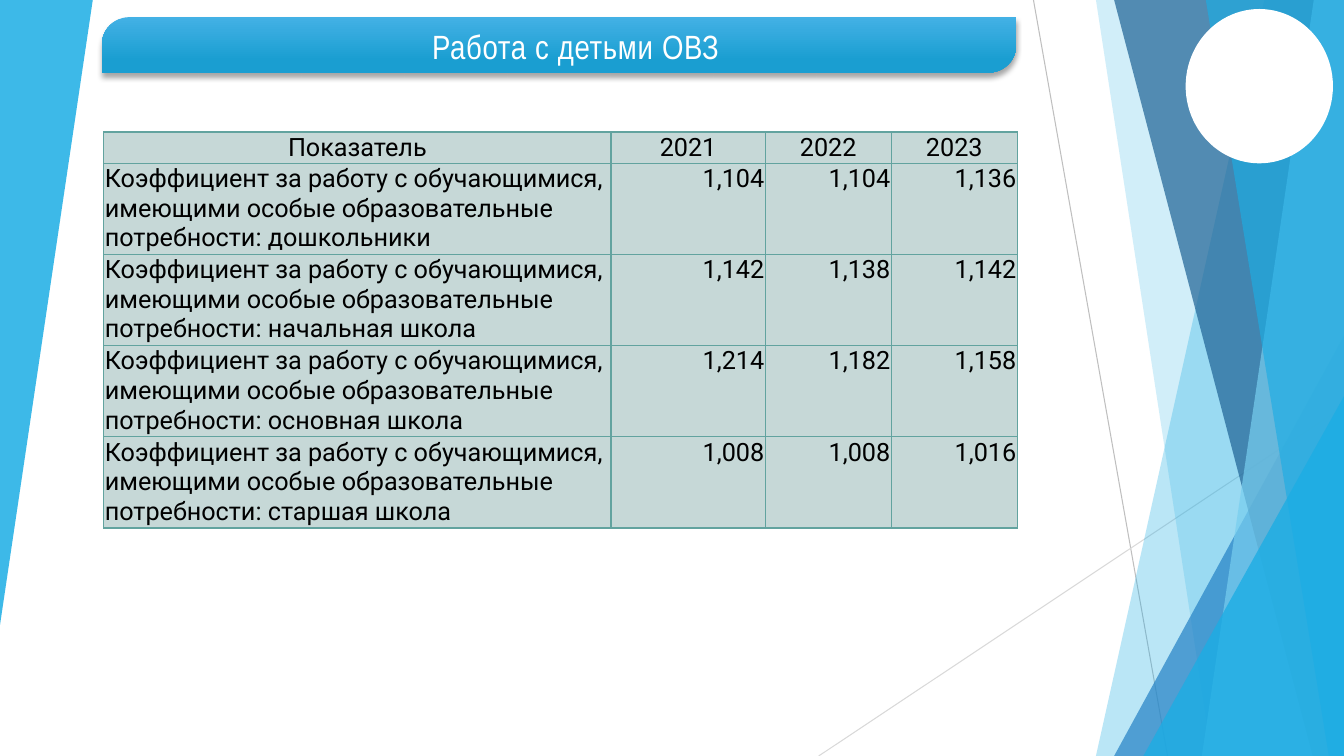
"""Build the slide about coefficients for work with children with special needs."""
from dataclasses import dataclass

from lxml import etree
from pptx import Presentation
from pptx.dml.color import RGBColor
from pptx.enum.shapes import MSO_CONNECTOR, MSO_SHAPE
from pptx.enum.text import MSO_ANCHOR, PP_ALIGN
from pptx.oxml.ns import qn
from pptx.shapes.autoshape import Shape
from pptx.slide import Slide
from pptx.table import _Cell
from pptx.text.text import _Paragraph
from pptx.util import Inches, Pt

STRAIGHT = MSO_CONNECTOR.STRAIGHT
TRIANGLE, ELLIPSE = MSO_SHAPE.RIGHT_TRIANGLE, MSO_SHAPE.OVAL
TRIANGLE = MSO_SHAPE.ISOSCELES_TRIANGLE
BANNER = MSO_SHAPE.ROUND_2_DIAG_RECTANGLE
LEFT, CENTER, RIGHT = PP_ALIGN.LEFT, PP_ALIGN.CENTER, PP_ALIGN.RIGHT
TOP, MIDDLE = MSO_ANCHOR.TOP, MSO_ANCHOR.MIDDLE

WHITE = RGBColor(0xFF, 0xFF, 0xFF)
BLACK = RGBColor(0x00, 0x00, 0x00)
GRAY = RGBColor(0xBF, 0xBF, 0xBF)
LIGHT_GRAY = RGBColor(0xD9, 0xD9, 0xD9)
CYAN = RGBColor(0x1C, 0xAD, 0xE4)
PALE_CYAN = RGBColor(0x77, 0xCE, 0xEF)
BLUE = RGBColor(0x26, 0x83, 0xC6)
DARK_BLUE = RGBColor(0x1D, 0x62, 0x94)
BANNER_TOP = RGBColor(0x43, 0xB1, 0xE5)
BANNER_BOTTOM = RGBColor(0x1A, 0x9E, 0xD1)
CELL_FILL = RGBColor(0xC6, 0xD8, 0xD7)
CELL_BORDER = RGBColor(0x62, 0xA3, 0x9F)

WIDTH, HEIGHT = 13.33, 7.5
HEADERS = ("Показатель", "2021", "2022", "2023")
INDICATOR = "Коэффициент за работу с обучающимися, имеющими особые образовательные потребности: "
COEFFICIENTS = {
    "дошкольники": ("1,104", "1,104", "1,136"),
    "начальная школа": ("1,142", "1,138", "1,142"),
    "основная школа": ("1,214", "1,182", "1,158"),
    "старшая школа": ("1,008", "1,008", "1,016"),
}
COLUMN_WIDTHS = (5.03, 1.53, 1.25, 1.25)
HEADER_HEIGHT, ROW_HEIGHT = 0.31, 0.905


@dataclass(frozen=True)
class Ray:
    start: tuple[float, float]
    end: tuple[float, float]
    color: RGBColor


@dataclass(frozen=True)
class Band:
    """A translucent band from the top edge to the bottom edge, ending at the right."""
    top_left: float
    bottom_left: float
    color: RGBColor
    opacity: int


@dataclass(frozen=True)
class Wedge:
    """A translucent right-angled triangle."""
    left: float
    top: float
    width: float
    height: float
    color: RGBColor
    opacity: int
    rotation: int = 0


RAYS = (
    Ray((10.25, 0), (11.58, HEIGHT), GRAY),
    Ray((WIDTH, 4.03), (8.12, HEIGHT), LIGHT_GRAY),
)
FACETS = (
    Band(12.54, 10.87, CYAN, 30),
    Band(10.87, 12.02, CYAN, 20),
    Wedge(11.05, 3.33, 2.28, 4.17, BLUE, 72),
    Band(11.05, 13.02, DARK_BLUE, 70),
    Band(13.03, 11.92, PALE_CYAN, 70),
    Band(11.96, 13.18, CYAN, 65),
    Wedge(11.34, 3.93, 1.99, 3.57, CYAN, 80),
    Wedge(0, 0, 0.92, 6.2, CYAN, 85, rotation=180),
)


def add_ray(slide: Slide, ray: Ray) -> None:
    """Draw one thin background line."""
    ends = [Inches(value) for value in (*ray.start, *ray.end)]
    connector = slide.shapes.add_connector(STRAIGHT, *ends)
    connector.line.color.rgb = ray.color
    connector.line.width = Pt(0.75)
    etree.SubElement(connector._element.spPr, qn("a:effectLst"))


def add_facet(slide: Slide, facet: Band | Wedge) -> None:
    """Draw one translucent background facet."""
    if isinstance(facet, Band):
        builder = slide.shapes.build_freeform(Inches(facet.top_left), 0)
        corners = ((WIDTH, 0), (WIDTH, HEIGHT), (facet.bottom_left, HEIGHT))
        builder.add_line_segments([(Inches(x), Inches(y)) for x, y in corners], close=True)
        shape = builder.convert_to_shape()
    else:
        box = (facet.left, facet.top, facet.width, facet.height)
        shape = slide.shapes.add_shape(TRIANGLE, *map(Inches, box))
        shape.adjustments[0] = 1
        shape.rotation = facet.rotation
    shape.shadow.inherit = False
    shape.line.fill.background()
    shape.fill.solid()
    shape.fill.fore_color.rgb = facet.color
    color = shape._element.spPr.find(f"{qn('a:solidFill')}/{qn('a:srgbClr')}")
    etree.SubElement(color, qn("a:alpha"), val=str(facet.opacity * 1000))


def add_circle(slide: Slide) -> None:
    """Draw the white circle in the corner."""
    circle = slide.shapes.add_shape(ELLIPSE, Inches(11.77), Inches(0.1), Inches(1.44), Inches(1.51))
    circle.shadow.inherit = False
    circle.fill.solid()
    circle.fill.fore_color.rgb = WHITE
    circle.line.color.rgb = WHITE
    circle.line.width = Pt(1.5)


def add_shadow(shape: Shape) -> None:
    """Drop a soft shadow straight down from the shape."""
    shape.shadow.inherit = False
    effects = shape._element.spPr.find(qn("a:effectLst"))
    shadow = etree.SubElement(effects, qn("a:outerShdw"), blurRad=str(Pt(4)), dist=str(Pt(3)),
                              dir="5400000", rotWithShape="0")
    color = etree.SubElement(shadow, qn("a:srgbClr"), val=str(BLACK))
    etree.SubElement(color, qn("a:alpha"), val="35000")


def add_banner(slide: Slide) -> None:
    """Draw the gradient banner behind the title."""
    banner = slide.shapes.add_shape(BANNER, Inches(1.01), Inches(0.17), Inches(9.07), Inches(0.55))
    banner.adjustments[0] = 0.5
    banner.adjustments[1] = 0
    banner.line.fill.background()
    banner.fill.gradient()
    banner.fill.gradient_angle = 270
    stops = zip(banner.fill.gradient_stops, (0, 0.78), (BANNER_TOP, BANNER_BOTTOM))
    for stop, position, color in stops:
        stop.position = position
        stop.color.rgb = color
    add_shadow(banner)


def format_paragraph(paragraph: _Paragraph, font: str, size: int, color: RGBColor,
                     alignment: PP_ALIGN) -> None:
    """Apply font and alignment to a paragraph."""
    paragraph.alignment = alignment
    paragraph.font.name = font
    paragraph.font.size = Pt(size)
    paragraph.font.bold = False
    paragraph.font.color.rgb = color


def place_title(slide: Slide) -> None:
    """Fill the title placeholder and bring it in front of the banner."""
    title = slide.shapes.title
    title.left, title.top, title.width, title.height = map(Inches, (1.5, 0.21, 8.42, 0.5))
    title.text_frame.text = "Работа с детьми ОВЗ"
    title.text_frame.vertical_anchor = TOP
    paragraph = title.text_frame.paragraphs[0]
    format_paragraph(paragraph, "Arial Narrow", 24, WHITE, CENTER)
    paragraph.runs[0]._r.get_or_add_rPr().set("spc", "50")
    slide.shapes._spTree.append(title._element)


def fill_cell(cell: _Cell, text: str, alignment: PP_ALIGN, anchor: MSO_ANCHOR) -> None:
    """Write and style one table cell."""
    cell.margin_left = cell.margin_right = cell.margin_top = Inches(0.01)
    cell.margin_bottom = 0
    cell.vertical_anchor = anchor
    cell.text = text
    format_paragraph(cell.text_frame.paragraphs[0], "Roboto", 18, BLACK, alignment)
    properties = cell._tc.get_or_add_tcPr()
    for side in ("a:lnL", "a:lnR", "a:lnT", "a:lnB"):
        border = etree.SubElement(properties, qn(side), w=str(Pt(1)))
        solid = etree.SubElement(border, qn("a:solidFill"))
        etree.SubElement(solid, qn("a:srgbClr"), val=str(CELL_BORDER))
    cell.fill.solid()
    cell.fill.fore_color.rgb = CELL_FILL


def add_coefficients(slide: Slide) -> None:
    """Draw the table of coefficients by school level and year."""
    rows = [HEADERS, *((INDICATOR + level, *values) for level, values in COEFFICIENTS.items())]
    heights = [HEADER_HEIGHT] + [ROW_HEIGHT] * len(COEFFICIENTS)
    frame = slide.shapes.add_table(len(rows), len(HEADERS), Inches(1.03), Inches(1.31),
                                   Inches(sum(COLUMN_WIDTHS)), Inches(sum(heights)))
    table = frame.table
    table.first_row = table.horz_banding = False
    for column, width in zip(table.columns, COLUMN_WIDTHS):
        column.width = Inches(width)
    for row_index, (row, height) in enumerate(zip(rows, heights)):
        table.rows[row_index].height = Inches(height)
        for column_index, text in enumerate(row):
            alignment = CENTER if row_index == 0 else RIGHT if column_index else LEFT
            anchor = TOP if row_index else MIDDLE
            fill_cell(table.cell(row_index, column_index), text, alignment, anchor)


def main() -> None:
    """Build and save the presentation."""
    presentation = Presentation()
    presentation.slide_width, presentation.slide_height = Inches(WIDTH), Inches(HEIGHT)
    slide = presentation.slides.add_slide(presentation.slide_layouts[5])
    for ray in RAYS:
        add_ray(slide, ray)
    for facet in FACETS:
        add_facet(slide, facet)
    add_circle(slide)
    add_banner(slide)
    place_title(slide)
    add_coefficients(slide)
    presentation.save("out.pptx")


if __name__ == "__main__":
    main()
